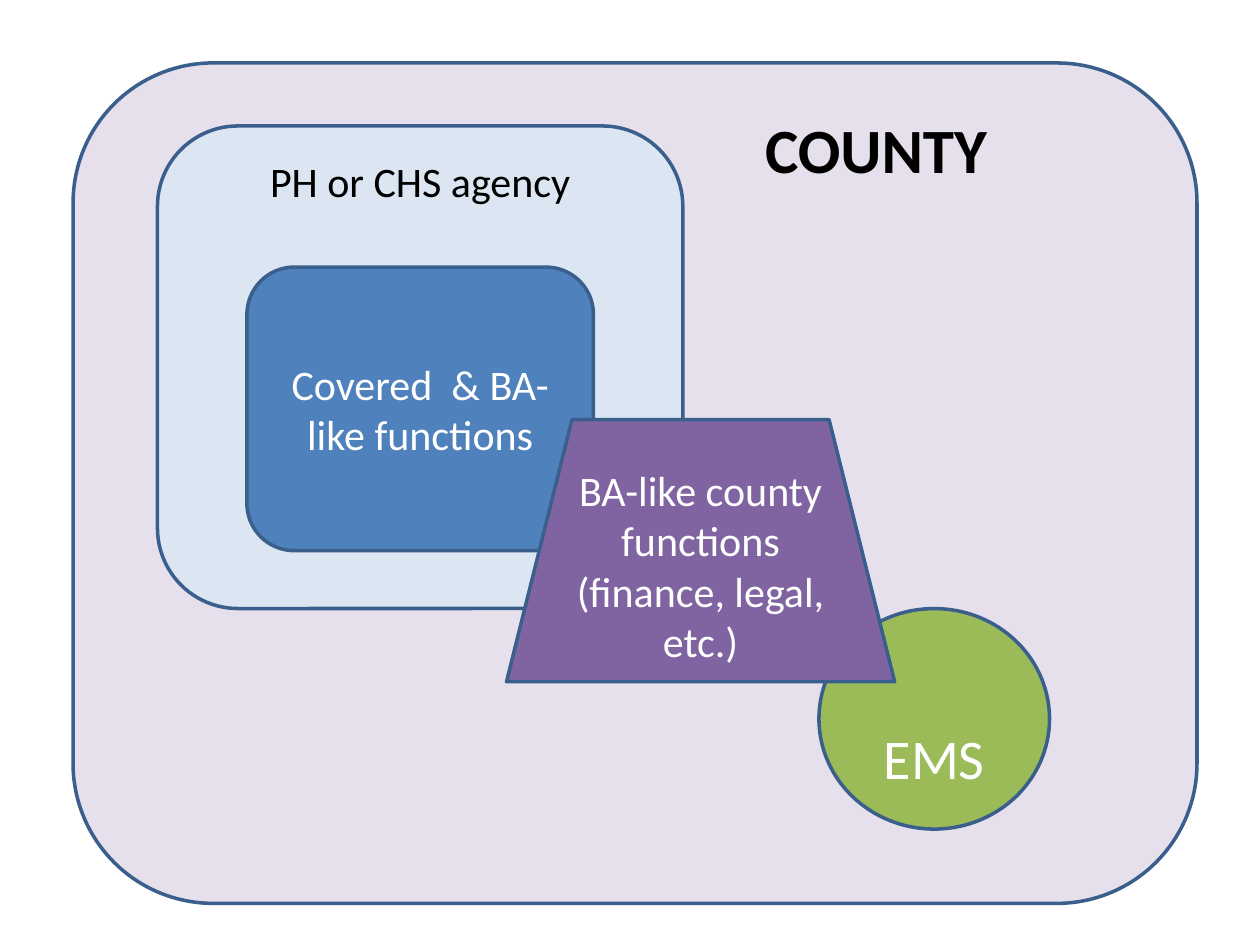
"""Build a slide of nested county, agency and function areas."""
from pptx import Presentation
from pptx.dml.color import RGBColor
from pptx.enum.shapes import MSO_SHAPE
from pptx.enum.text import MSO_ANCHOR, PP_ALIGN
from pptx.util import Inches, Pt

ROUNDED = MSO_SHAPE.ROUNDED_RECTANGLE
OVAL = MSO_SHAPE.OVAL
TRAPEZOID = MSO_SHAPE.TRAPEZOID
TOP, MIDDLE, BOTTOM = MSO_ANCHOR.TOP, MSO_ANCHOR.MIDDLE, MSO_ANCHOR.BOTTOM
CENTER, RIGHT = PP_ALIGN.CENTER, PP_ALIGN.RIGHT

BLACK = RGBColor(0x00, 0x00, 0x00)
WHITE = RGBColor(0xFF, 0xFF, 0xFF)
OUTLINE = RGBColor(0x3A, 0x5F, 0x8C)
LAVENDER = RGBColor(0xE6, 0xE0, 0xEC)
PALE_BLUE = RGBColor(0xDC, 0xE6, 0xF2)
GREEN = RGBColor(0x9B, 0xBB, 0x59)
BLUE = RGBColor(0x4F, 0x81, 0xBD)
PURPLE = RGBColor(0x80, 0x64, 0xA2)

AREAS = [
    ("COUNTY", ROUNDED, (0.58, 0.5, 8.92, 6.67), LAVENDER,
     {"vertical_anchor": TOP, "margin_right": Inches(1.34)}, RIGHT,
     {"size": Pt(36), "bold": True}, BLACK),
    ("PH or CHS agency", ROUNDED, (1.25, 1, 4.17, 3.83), PALE_BLUE,
     {"vertical_anchor": TOP}, CENTER, {"size": Pt(24)}, BLACK),
    ("EMS", OVAL, (6.5, 4.83, 1.83, 1.75), GREEN,
     {"vertical_anchor": BOTTOM}, CENTER, {"size": Pt(32)}, WHITE),
    ("Covered  & BA-like functions", ROUNDED, (1.96, 2.12, 2.75, 2.25), BLUE,
     {"vertical_anchor": MIDDLE}, CENTER, {"size": Pt(24)}, WHITE),
    ("BA-like county functions (finance, legal, etc.)", TRAPEZOID,
     (4.02, 3.33, 3.08, 2.08), PURPLE,
     {"vertical_anchor": MIDDLE}, CENTER, {"size": Pt(24)}, WHITE),
]

presentation = Presentation()
presentation.slide_width = Inches(10)
presentation.slide_height = Inches(7.5)
slide = presentation.slides.add_slide(presentation.slide_layouts[6])

for text, kind, box, fill, frame_format, alignment, font_format, color in AREAS:
    shape = slide.shapes.add_shape(kind, *map(Inches, box))
    shape.shadow.inherit = False
    shape.fill.solid()
    shape.fill.fore_color.rgb = fill
    shape.line.color.rgb = OUTLINE
    shape.line.width = Pt(2)
    frame = shape.text_frame
    frame.word_wrap = True
    for name, value in frame_format.items():
        setattr(frame, name, value)
    paragraph = frame.paragraphs[0]
    paragraph.alignment = alignment
    run = paragraph.add_run()
    run.text = text
    run.font.name = "Calibri"
    run.font.color.rgb = color
    for name, value in font_format.items():
        setattr(run.font, name, value)

presentation.save("out.pptx")
